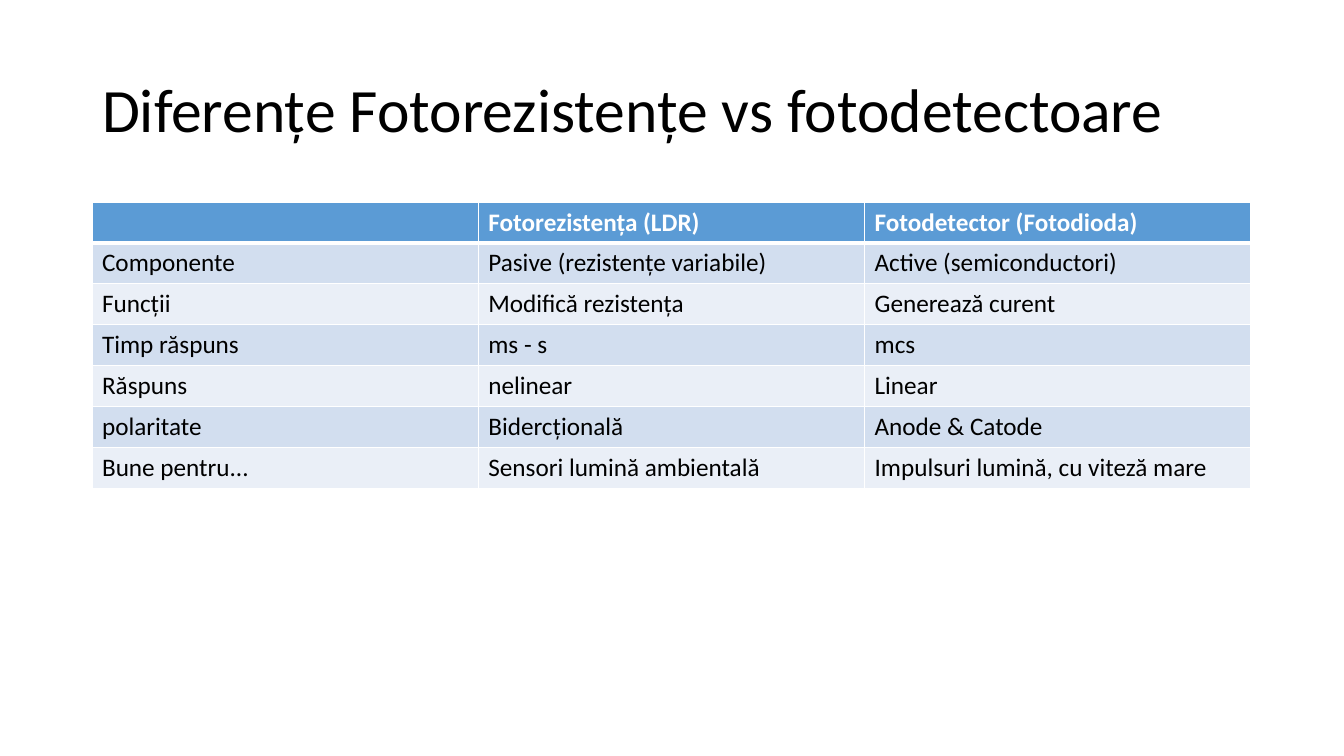
from lxml.etree import SubElement
from pptx import Presentation
from pptx.dml.color import RGBColor
from pptx.enum.text import MSO_ANCHOR, MSO_AUTO_SIZE, PP_ALIGN
from pptx.oxml.ns import qn
from pptx.util import Pt

SCALE = 914400 / 100.8
FONT = "Calibri"
COLORS = {
    "text": "000000",
    "white": "FFFFFF",
    "head": "5B9BD5",
    "odd": "D2DEEF",
    "even": "EAEFF7",
}
ROWS = [
    ("", "Fotorezistența (LDR)", "Fotodetector (Fotodioda)"),
    ("Componente", "Pasive (rezistențe variabile)", "Active (semiconductori)"),
    ("Funcții", "Modifică rezistența", "Generează curent"),
    ("Timp răspuns", "ms - s", "mcs"),
    ("Răspuns", "nelinear", "Linear"),
    ("polaritate", "Bidercțională", "Anode & Catode"),
    ("Bune pentru...", "Sensori lumină ambientală", "Impulsuri lumină, cu viteză mare"),
]


def px(count):
    """Turn px into EMU."""
    return round(count * SCALE)


def color(name):
    """Look up a named colour."""
    return RGBColor.from_string(COLORS[name])


def add_run(para, text, size, tone, bold=False):
    """Add one formatted run to a paragraph."""
    run = para.add_run()
    run.text = text
    run.font.name = FONT
    run.font.size = Pt(size)
    run.font.bold = bold
    run.font.color.rgb = color(tone)


def add_edge(cell, side, width):
    """Draw one white border of a cell."""
    line = SubElement(cell._tc.get_or_add_tcPr(), qn(f"a:ln{side}"), w=str(Pt(width)))
    fill = SubElement(line, qn("a:solidFill"))
    SubElement(fill, qn("a:srgbClr"), val=COLORS["white"])


def add_title(slide, box, text):
    """Place and fill the title."""
    title = slide.shapes.title
    title.left, title.top, title.width, title.height = map(px, box)
    frame = title.text_frame
    frame.word_wrap = True
    frame.auto_size = MSO_AUTO_SIZE.NONE
    frame.vertical_anchor = MSO_ANCHOR.MIDDLE
    para = frame.paragraphs[0]
    para.alignment = PP_ALIGN.LEFT
    para.line_spacing = 0.9
    add_run(para, text, 44, "text")


def fill_cell(cell, text, row):
    """Style and fill a cell by its row number."""
    head = row == 0
    edges = {"L": 1, "R": 1, "T": 3 if row == 1 else 1, "B": 3 if head else 1}
    for side, width in edges.items():
        add_edge(cell, side, width)
    cell.fill.solid()
    cell.fill.fore_color.rgb = color("head" if head else "odd" if row % 2 else "even")
    if text:
        add_run(cell.text_frame.paragraphs[0], text, 18, "white" if head else "text", head)


def add_grid(slide, box, rows):
    """Build the comparison table in its box."""
    left, top, width, height = map(px, box)
    table = slide.shapes.add_table(len(rows), len(rows[0]), left, top, width, height).table
    for row, texts in enumerate(rows):
        for col, text in enumerate(texts):
            fill_cell(table.cell(row, col), text, row)


def main():
    """Build and save the slide."""
    deck = Presentation()
    deck.slide_width, deck.slide_height = px(1344), px(756)
    slide = deck.slides.add_slide(deck.slide_layouts[5])
    add_title(slide, (92, 40, 1159, 146), "Diferențe Fotorezistențe vs fotodetectoare")
    add_grid(slide, (92, 202, 1159, 286), ROWS)
    deck.save("out.pptx")


if __name__ == "__main__":
    main()
